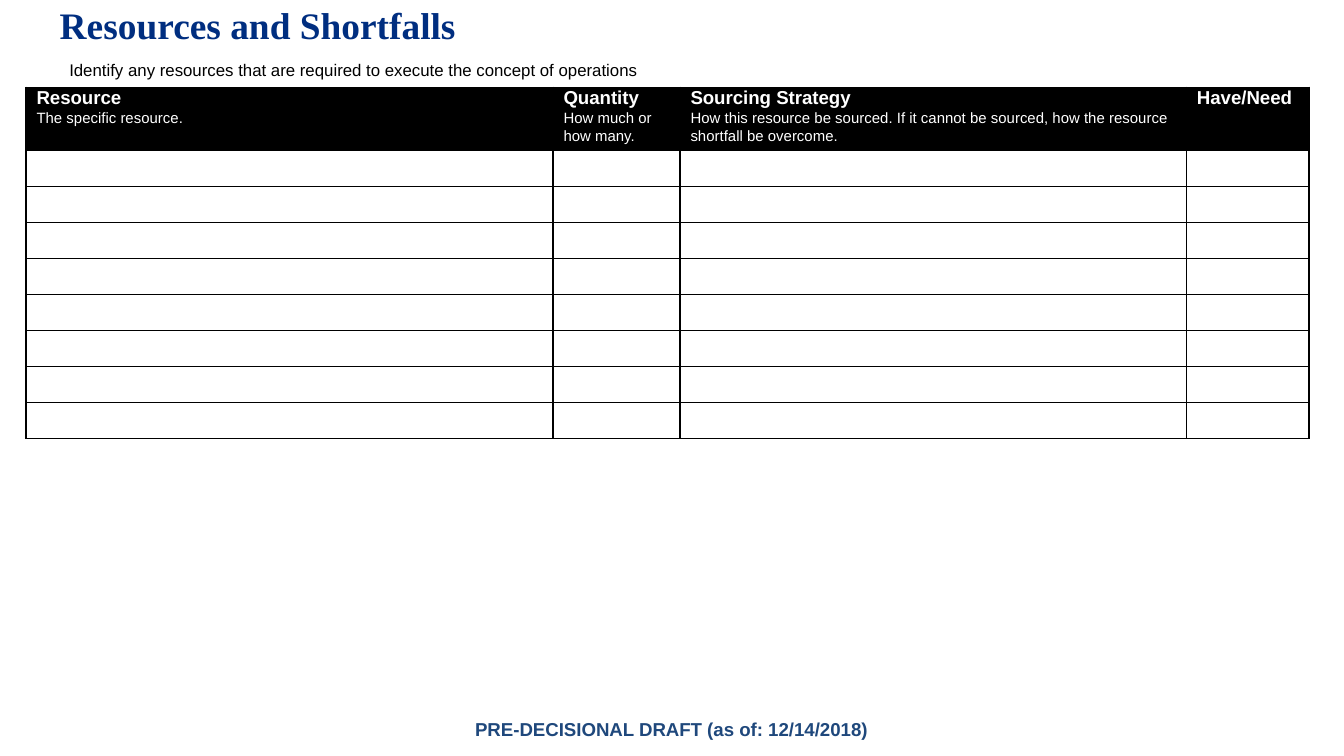
from lxml import etree
from pptx import Presentation
from pptx.dml.color import RGBColor
from pptx.oxml import parse_xml
from pptx.oxml.ns import nsdecls, qn
from pptx.util import Cm, Pt

BLACK = RGBColor(0x00, 0x00, 0x00)
WHITE = RGBColor(0xFF, 0xFF, 0xFF)
NAVY = RGBColor(0x00, 0x2E, 0x80)
BLUE = RGBColor(0x1F, 0x48, 0x7C)


def style(para, text, size, color, bold=False, face="Arial"):
    para.text = text
    font = para.font
    font.name, font.size, font.bold = face, Pt(size), bold
    font.color.rgb = color


def border(cell):
    props = cell._tc.get_or_add_tcPr()
    for side in "LRTB":
        props.append(parse_xml(
            f'<a:ln{side} {nsdecls("a")} w="12700"><a:solidFill>'
            f'<a:srgbClr val="{BLACK}"/></a:solidFill></a:ln{side}>'))


deck = Presentation()
deck.slide_width, deck.slide_height = Cm(25.4), Cm(14.28)
slide = deck.slides.add_slide(deck.slide_layouts[6])

# Title, instruction and footer: left, top, width, height, inset, text style
texts = [
    (1.09, 0, 7.8, 0.91, 0.04, "Resources and Shortfalls", 20, NAVY, True, "Times New Roman"),
    (1.27, 1.09, 11, 0.46, 0.04,
     "Identify any resources that are required to execute the concept of operations",
     9, BLACK, False, "Arial"),
    (8.94, 13.56, 8, 0.46, 0, "PRE-DECISIONAL DRAFT (as of: 12/14/2018)",
     10, BLUE, True, "Arial"),
]
for left, top, wide, high, inset, *look in texts:
    frame = slide.shapes.add_textbox(Cm(left), Cm(top), Cm(wide), Cm(high)).text_frame
    frame.margin_left = Cm(0.04)
    frame.margin_right = frame.margin_bottom = 0
    frame.margin_top = Cm(inset)
    frame.word_wrap = True
    style(frame.paragraphs[0], *look)

# Resource table
heads = [
    ["Resource", "The specific resource."],
    ["Quantity", "How much or", "how many."],
    ["Sourcing Strategy",
     "How this resource be sourced. If it cannot be sourced, how the resource",
     "shortfall be overcome."],
    ["Have/Need"],
]
widths = [9.96, 2.4, 9.57, 2.32]
heights = [1.19] + [0.68] * 8
table = slide.shapes.add_table(len(heights), len(widths), Cm(0.49), Cm(1.65),
                               Cm(sum(widths)), Cm(sum(heights))).table
table.horz_banding = False
for col, wide in zip(table.columns, widths):
    col.width = Cm(wide)
for row, high in zip(table.rows, heights):
    row.height = Cm(high)
for cell in table.iter_cells():
    cell.margin_left = Cm(0.2)
    cell.margin_right = cell.margin_top = cell.margin_bottom = 0
    border(cell)
    cell.fill.background()

# Header row
for cell, lines in zip(table.rows[0].cells, heads):
    cell.fill.solid()
    cell.fill.fore_color.rgb = BLACK
    frame = cell.text_frame
    for n, line in enumerate(lines):
        para = frame.paragraphs[0] if n == 0 else frame.add_paragraph()
        style(para, line, 8 if n else 10, WHITE, n == 0)
        if n:
            para.space_before = Pt(0.5)
        else:
            para.line_spacing = Pt(11.6)

# Small type keeps the empty rows at their height
for row in list(table.rows)[1:]:
    for cell in row.cells:
        para = cell.text_frame.paragraphs[0]
        etree.SubElement(para._p, qn("a:endParaRPr"), sz="800")

deck.save("out.pptx")
